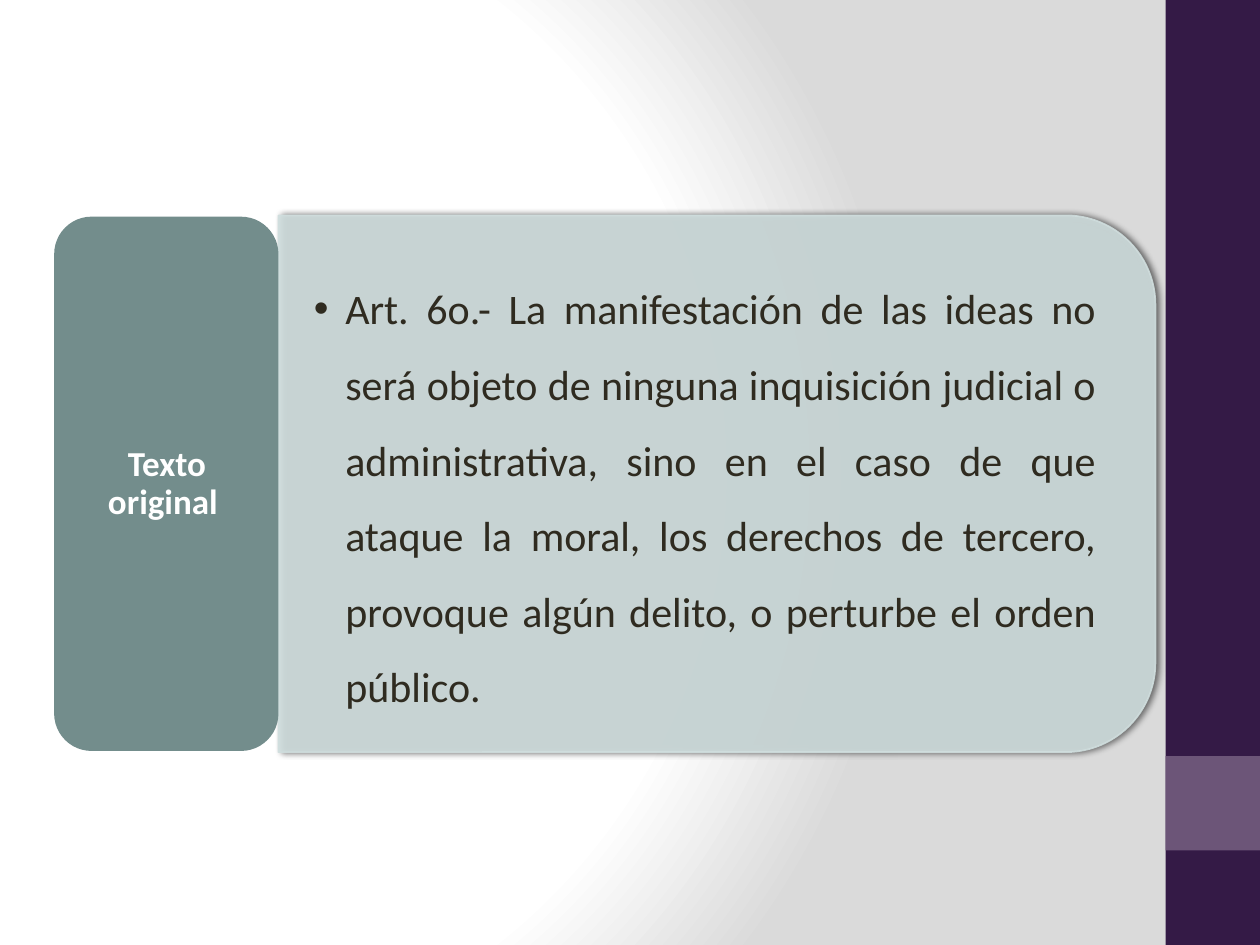
from dataclasses import dataclass

from lxml.etree import SubElement
from pptx import Presentation
from pptx.dml.color import RGBColor
from pptx.enum.shapes import MSO_SHAPE
from pptx.enum.text import MSO_ANCHOR, MSO_AUTO_SIZE, PP_ALIGN
from pptx.oxml import parse_xml
from pptx.oxml.ns import nsdecls, qn
from pptx.util import Inches, Pt


@dataclass(frozen=True)
class Theme:
    font: str = "Calibri"
    purple: str = "341A46"
    mauve: str = "6C5578"
    teal: str = "738D8C"
    pale: str = "D0DEDE"
    ink: str = "2F2B20"
    white: str = "FFFFFF"
    gray: str = "DADADA"
    shadow: str = "000000"
    label_size: int = 20
    body_size: int = 24


@dataclass(frozen=True)
class Box:
    left: float
    top: float
    width: float
    height: float

    def lengths(self):
        return [Inches(v) for v in (self.left, self.top, self.width, self.height)]


THEME = Theme()
ARTICLE = (
    "Art. 6o.- La manifestación de las ideas no será objeto de ninguna "
    "inquisición judicial o administrativa, sino en el caso de que ataque la "
    "moral, los derechos de tercero, provoque algún delito, o perturbe el "
    "orden público."
)


def set_background(slide) -> None:
    stops = "".join(
        f'<a:gs pos="{pos * 1000}"><a:srgbClr val="{color}"/></a:gs>'
        for pos, color in ((0, THEME.white), (75, THEME.white), (100, THEME.gray))
    )
    bg = parse_xml(
        f'<p:bg {nsdecls("p", "a")}><p:bgPr><a:gradFill rotWithShape="1">'
        f"<a:gsLst>{stops}</a:gsLst>"
        '<a:path path="circle">'
        '<a:fillToRect l="20000" t="50000" r="100000" b="50000"/></a:path>'
        "</a:gradFill><a:effectLst/></p:bgPr></p:bg>"
    )
    slide.element.cSld.insert(0, bg)


def add_panel(slide, kind: MSO_SHAPE, box: Box, color: str):
    sp = slide.shapes.add_shape(kind, *box.lengths())
    sp.shadow.inherit = False
    sp.fill.solid()
    sp.fill.fore_color.rgb = RGBColor.from_string(color)
    sp.line.fill.background()
    return sp


def soften_panel(sp, color: str) -> None:
    """Add a matching outline, 90% opacity and a soft outer shadow."""
    sp.line.color.rgb = RGBColor.from_string(color)
    sp.line.width = Pt(1)
    props = sp.element.spPr
    for clr in props.iter(qn("a:srgbClr")):
        SubElement(clr, qn("a:alpha"), val="90000")
    props.find(qn("a:effectLst")).append(parse_xml(
        f'<a:outerShdw {nsdecls("a")} blurRad="{Pt(4)}" dist="{Pt(2)}" dir="0" '
        f'rotWithShape="0"><a:srgbClr val="{THEME.shadow}">'
        '<a:alpha val="60000"/></a:srgbClr></a:outerShdw>'
    ))


def fill_placeholder(slide, sp, box: Box, text: str, margins: tuple,
                     para: dict, font: dict, color: str, bullet: bool = False) -> None:
    """Place a placeholder in front of the panels and format its text."""
    slide.shapes.element.append(sp.element)
    sp.left, sp.top, sp.width, sp.height = box.lengths()
    tf = sp.text_frame
    side, edge = (Inches(m) for m in margins)
    frame = dict(word_wrap=True, auto_size=MSO_AUTO_SIZE.NONE,
                 vertical_anchor=MSO_ANCHOR.MIDDLE, margin_left=side,
                 margin_right=side, margin_top=edge, margin_bottom=edge)
    for name, value in frame.items():
        setattr(tf, name, value)
    p = tf.paragraphs[0]
    r = p.add_run()
    r.text = text
    for name, value in para.items():
        setattr(p, name, value)
    if bullet:
        props = p._p.get_or_add_pPr()
        props.set("marL", str(Inches(0.25)))
        props.set("indent", str(-Inches(0.25)))
        SubElement(props, qn("a:buChar"), char="•")
    for name, value in font.items():
        setattr(r.font, name, value)
    r.font.color.rgb = RGBColor.from_string(color)


def main() -> None:
    prs = Presentation()
    prs.slide_width, prs.slide_height = Inches(10), Inches(7.5)
    slide = prs.slides.add_slide(prs.slide_layouts[1])
    set_background(slide)

    add_panel(slide, MSO_SHAPE.RECTANGLE, Box(9.25, 0, 0.75, 7.5), THEME.purple)
    add_panel(slide, MSO_SHAPE.RECTANGLE, Box(9.25, 6, 0.75, 0.75), THEME.mauve)
    article = add_panel(slide, MSO_SHAPE.ROUND_2_SAME_RECTANGLE,
                        Box(3.56, 0.36, 4.26, 6.96), THEME.pale)
    article.rotation = 90
    soften_panel(article, THEME.pale)
    add_panel(slide, MSO_SHAPE.ROUNDED_RECTANGLE, Box(0.43, 1.72, 1.78, 4.24), THEME.teal)

    title, body = slide.placeholders
    fill_placeholder(
        slide, body, Box(2.22, 1.92, 6.75, 3.85), ARTICLE, (0.27, 0.14),
        dict(alignment=PP_ALIGN.JUSTIFY, line_spacing=1.5,
             space_before=Pt(0), space_after=Pt(3.6)),
        dict(name=THEME.font, size=Pt(THEME.body_size)), THEME.ink, bullet=True)
    fill_placeholder(
        slide, title, Box(0.52, 1.81, 1.61, 4.06), "Texto original ", (0.08, 0.04),
        dict(alignment=PP_ALIGN.CENTER, line_spacing=0.9,
             space_before=Pt(0), space_after=Pt(7)),
        dict(name=THEME.font, size=Pt(THEME.label_size), bold=True), THEME.white)

    prs.save("out.pptx")


if __name__ == "__main__":
    main()
